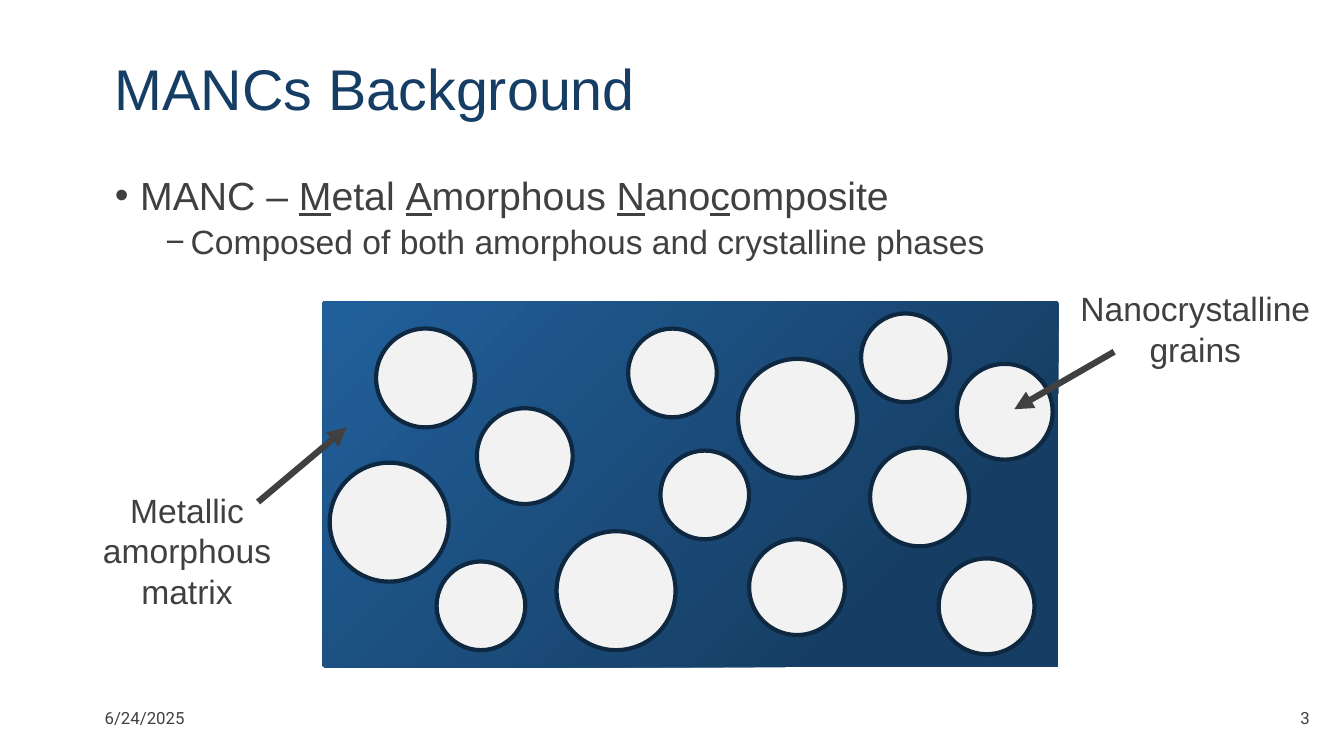
"""Build the slide on metal amorphous nanocomposites."""
from dataclasses import dataclass

from lxml.etree import SubElement
from pptx import Presentation
from pptx.dml.color import RGBColor
from pptx.enum.shapes import MSO_CONNECTOR, MSO_SHAPE
from pptx.enum.text import MSO_ANCHOR, MSO_AUTO_SIZE, PP_ALIGN
from pptx.oxml.ns import qn
from pptx.util import Inches, Pt


@dataclass(frozen=True)
class Theme:
    """Hold the colours, fonts and type sizes."""
    navy: RGBColor = RGBColor.from_string("163E64")
    blue: RGBColor = RGBColor.from_string("215F9A")
    edge: RGBColor = RGBColor.from_string("0E2841")
    grain: RGBColor = RGBColor.from_string("F2F2F2")
    gray: RGBColor = RGBColor.from_string("404040")
    sans: str = "Arial"
    small: str = "Roboto"
    title: int = 41
    body: int = 28
    label: int = 24
    foot: int = 12


THEME = Theme()
GRAINS = {
    0.88: [(6.23, 3.26), (4.33, 5.57), (6.55, 4.47), (8.54, 3.11)],
    0.95: [(4.73, 4.05), (9.49, 3.61), (7.43, 5.35), (9.31, 5.54)],
    0.98: [(3.73, 3.26), (8.63, 4.44)],
    1.18: [(3.27, 4.59), (7.32, 3.56), (5.52, 5.27)],
}
TERM = ["MANC – ", "M", "etal ", "A", "morphous ", "N", "ano", "c", "omposite"]


def style(para, size, color=THEME.gray, face=THEME.sans):
    """Set the font of a paragraph."""
    font = para.font
    font.size, font.name, font.color.rgb = Pt(size), face, color


def place(shape, left, top, width, height):
    """Move and size a shape."""
    shape.left, shape.top = Inches(left), Inches(top)
    shape.width, shape.height = Inches(width), Inches(height)


def bullet(para, mark, left, before):
    """Give a paragraph a hanging bullet and its spacing."""
    props = para._p.get_or_add_pPr()
    props.set("marL", str(Inches(left)))
    props.set("indent", str(Inches(-0.25)))
    SubElement(props, qn("a:buFont"), typeface=THEME.sans)
    SubElement(props, qn("a:buChar"), char=mark)
    para.line_spacing = 0.9
    para.space_before = Pt(before)


def add_title(slide):
    """Fill the title."""
    title = slide.shapes.title
    place(title, 1.04, 0.47, 8.65, 0.89)
    frame = title.text_frame
    frame.text = "MANCs Background"
    frame.auto_size = MSO_AUTO_SIZE.NONE
    frame.vertical_anchor = MSO_ANCHOR.MIDDLE
    para = frame.paragraphs[0]
    para.alignment, para.line_spacing = PP_ALIGN.LEFT, 0.9
    style(para, THEME.title, THEME.navy)


def add_body(slide):
    """Fill the bullet list."""
    body = slide.placeholders[1]
    place(body, 1.04, 1.7, 8.99, 0.99)
    frame = body.text_frame
    frame.auto_size = MSO_AUTO_SIZE.NONE
    head = frame.paragraphs[0]
    bullet(head, "•", 0.25, 0)
    style(head, THEME.body)
    for index, part in enumerate(TERM):
        run = head.add_run()
        run.text = part
        if index % 2:
            run.font.underline = True
    sub = frame.add_paragraph()
    sub.text = "Composed of both amorphous and crystalline phases"
    sub.level = 1
    bullet(sub, "−", 0.75, 5)
    style(sub, THEME.label)


def add_matrix(slide):
    """Draw the matrix with its grains as one group."""
    group = slide.shapes.add_group_shape()
    block = group.shapes.add_shape(
        MSO_SHAPE.ROUNDED_RECTANGLE,
        Inches(3.2), Inches(2.99), Inches(7.3), Inches(3.63))
    block.adjustments[0] = 0.007
    block.shadow.inherit = False
    block.line.fill.background()
    block.fill.gradient()
    block.fill.gradient_angle = 135
    tones = [(0.22, THEME.navy), (0.98, THEME.blue)]
    for stop, (spot, tone) in zip(block.fill.gradient_stops, tones):
        stop.position, stop.color.rgb = spot, tone
    for size, spots in GRAINS.items():
        for left, top in spots:
            add_grain(group, left, top, size)


def add_grain(group, left, top, size):
    """Draw one round grain."""
    grain = group.shapes.add_shape(
        MSO_SHAPE.OVAL, Inches(left), Inches(top), Inches(size), Inches(size))
    grain.shadow.inherit = False
    grain.fill.solid()
    grain.fill.fore_color.rgb = THEME.grain
    grain.line.color.rgb = THEME.edge
    grain.line.width = Pt(3)


def add_arrow(slide, start, end):
    """Draw an arrow from a label into the matrix."""
    arrow = slide.shapes.add_connector(
        MSO_CONNECTOR.STRAIGHT, *map(Inches, start + end))
    arrow.line.color.rgb = THEME.gray
    arrow.line.width = Pt(4.5)
    SubElement(arrow.line._get_or_add_ln(), qn("a:tailEnd"), type="triangle")
    SubElement(arrow._element.spPr, qn("a:effectLst"))


def add_text(slide, text, spot, size, face=THEME.sans):
    """Add a centred text box."""
    box = slide.shapes.add_textbox(*map(Inches, spot))
    frame = box.text_frame
    frame.word_wrap = True
    frame.text = text
    para = frame.paragraphs[0]
    para.alignment = PP_ALIGN.CENTER
    style(para, size, face=face)
    return frame


def add_foot(slide, text, spot):
    """Add a small text at the foot."""
    frame = add_text(slide, text, spot, THEME.foot, THEME.small)
    frame.vertical_anchor = MSO_ANCHOR.MIDDLE
    frame.paragraphs[0].line_spacing = 0.9


def main():
    """Build and save the slide."""
    deck = Presentation()
    deck.slide_width, deck.slide_height = Inches(13.33), Inches(7.5)
    slide = deck.slides.add_slide(deck.slide_layouts[1])
    add_title(slide)
    add_matrix(slide)
    add_arrow(slide, (2.56, 4.98), (3.44, 4.24))
    add_text(slide, "Metallic amorphous matrix",
             (0.46, 4.81, 2.79, 1.31), THEME.label)
    add_arrow(slide, (11.05, 3.49), (10.06, 4.06))
    add_text(slide, "Nanocrystalline grains",
             (10.46, 2.81, 2.79, 0.91), THEME.label)
    add_body(slide)
    add_foot(slide, "3", (12.76, 6.99, 0.37, 0.29))
    add_foot(slide, "6/24/2025", (0.72, 6.99, 1.43, 0.28))
    deck.save("out.pptx")


if __name__ == "__main__":
    main()
